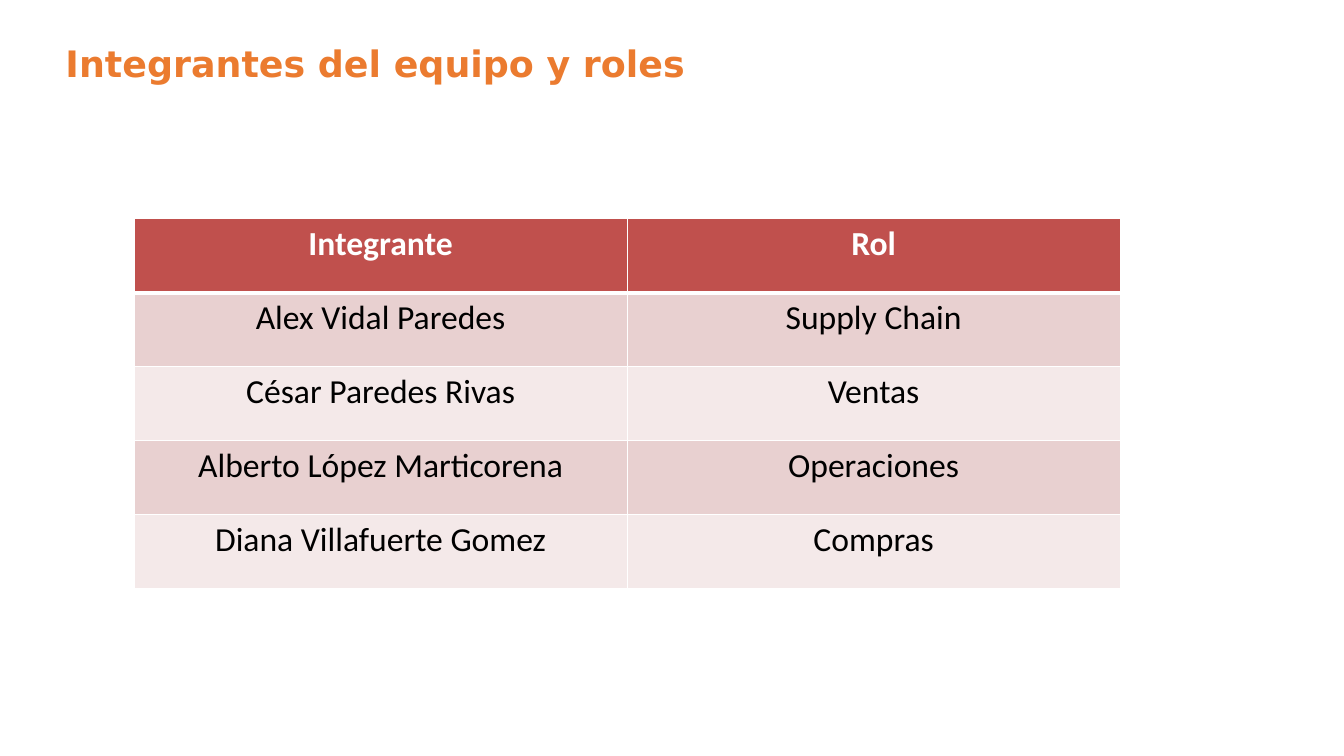
import lxml.etree
import pptx
import pptx.dml.color
import pptx.enum.text
import pptx.oxml.ns
import pptx.util
from pptx.util import Inches


def color(hex_code):
    return pptx.dml.color.RGBColor.from_string(hex_code)


def add_border(cell, side, points):
    """Draw a white line on one side (L, R, T or B) of a cell."""
    qn = pptx.oxml.ns.qn
    line = lxml.etree.SubElement(
        cell._tc.get_or_add_tcPr(), qn(f"a:ln{side}"), w=str(pptx.util.Pt(points)))
    fill = lxml.etree.SubElement(line, qn("a:solidFill"))
    lxml.etree.SubElement(fill, qn("a:srgbClr"), val="FFFFFF")


prs = pptx.Presentation()
prs.slide_width = Inches(13.33)
prs.slide_height = Inches(7.5)
slide = prs.slides.add_slide(prs.slide_layouts[6])

title = slide.shapes.add_textbox(
    Inches(0.65), Inches(0.41), Inches(12.04), Inches(0.44)).text_frame
title.word_wrap = True
title.margin_left = title.margin_right = title.margin_top = title.margin_bottom = 0
heading = title.paragraphs[0]
heading.text = "Integrantes del equipo y roles"
heading.font.name = "DejaVu Sans"
heading.font.size = pptx.util.Pt(26)
heading.font.bold = True
heading.font.color.rgb = color("EB7B2F")

team = [
    ("Integrante", "Rol"),
    ("Alex Vidal Paredes", "Supply Chain"),
    ("César Paredes Rivas", "Ventas"),
    ("Alberto López Marticorena", "Operaciones"),
    ("Diana Villafuerte Gomez", "Compras"),
]
roles = slide.shapes.add_table(
    len(team), 2, Inches(1.33), Inches(2.17), Inches(9.78), Inches(3.67)).table

for row, member in enumerate(team):
    is_header = row == 0
    if is_header:
        background = "C0504D"
    else:
        background = "E8D0D0" if row % 2 else "F4E9E9"
    # The rule under the header is thicker than the other lines.
    widths = {"L": 1, "R": 1, "T": 3 if row == 1 else 1, "B": 3 if is_header else 1}
    for column, text in enumerate(member):
        cell = roles.cell(row, column)
        for side, points in widths.items():
            add_border(cell, side, points)
        cell.fill.solid()
        cell.fill.fore_color.rgb = color(background)
        cell.text = text
        entry = cell.text_frame.paragraphs[0]
        entry.alignment = pptx.enum.text.PP_ALIGN.CENTER
        entry.font.name = "Calibri"
        entry.font.size = pptx.util.Pt(24)
        entry.font.bold = is_header
        entry.font.color.rgb = color("FFFFFF" if is_header else "000000")

prs.save("out.pptx")
